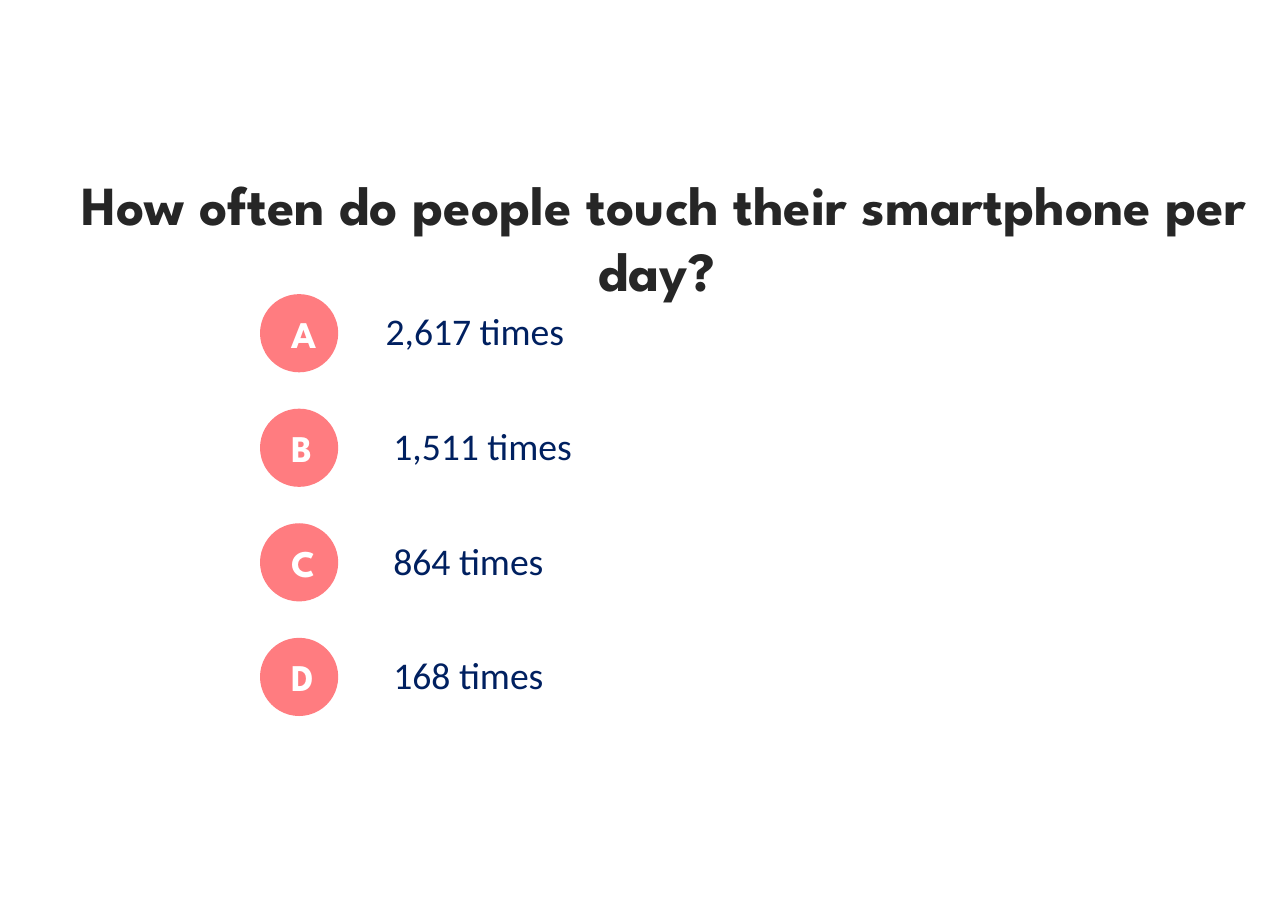
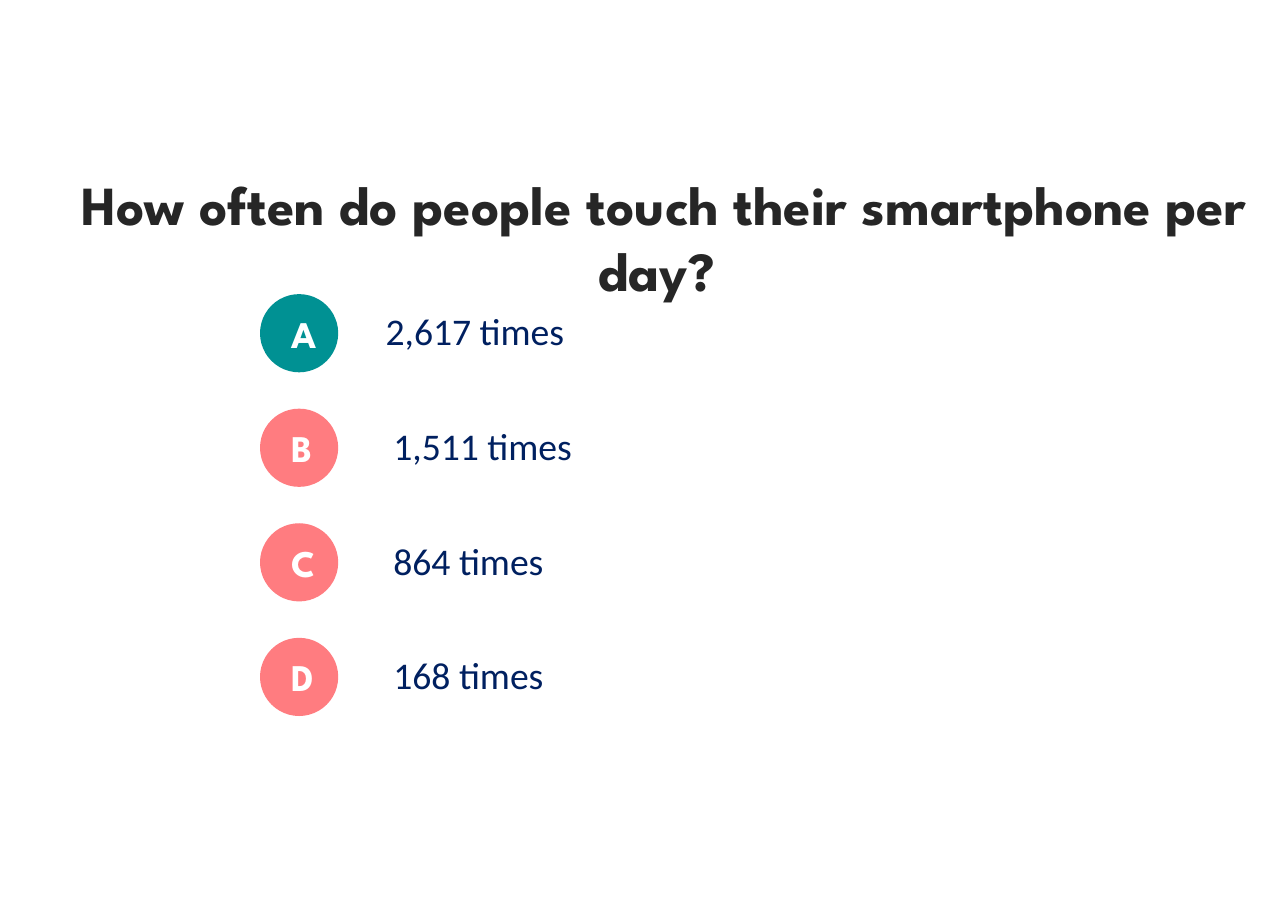
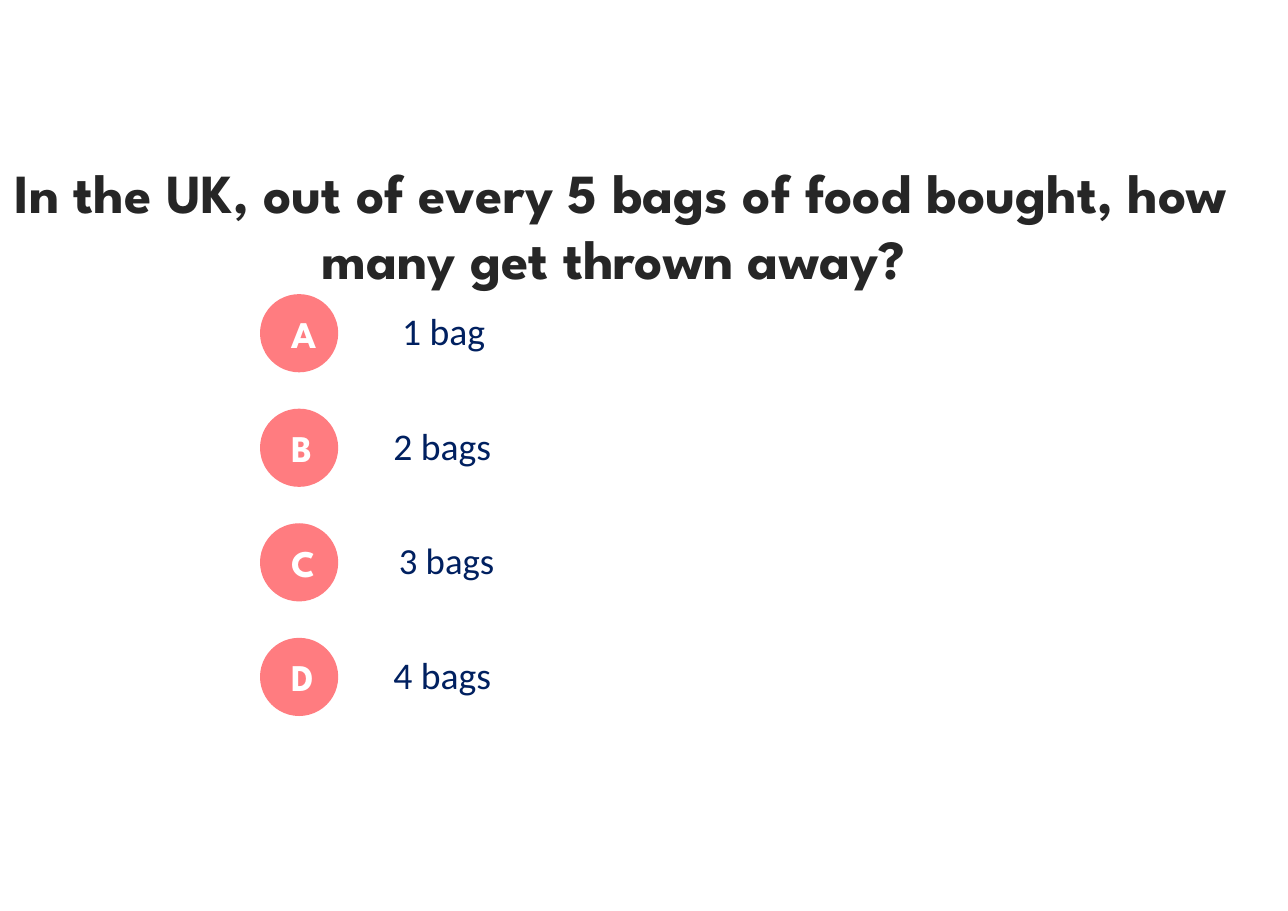
from dataclasses import dataclass

from pptx import Presentation
from pptx.dml.color import RGBColor
from pptx.enum.shapes import MSO_SHAPE
from pptx.enum.text import MSO_ANCHOR, PP_ALIGN
from pptx.util import Inches, Pt

CORAL, TEAL = "FF7C80", "009193"
NAVY, DARK, WHITE = "002060", "262626", "FFFFFF"
HEADING_FONT, BODY_FONT = "League Spartan", "Calibri"

BADGE_LEFT, BADGE_SIZE = 2.36, 0.71
FIRST_ROW, ROW_PITCH = 2.67, 1.04


@dataclass
class Answer:
    text: str
    left: float = 3.48
    size: float = 24.6


@dataclass
class Question:
    text: str
    at: tuple[float, float, float, float]
    answers: list[Answer]
    correct: str = ""


def rgb(color: str) -> RGBColor:
    return RGBColor.from_string(color)


def add_text(s, text: str, at: tuple[float, float, float, float], *, size: float,
             font: str, color: str, bold=False, align=PP_ALIGN.LEFT,
             anchor=MSO_ANCHOR.TOP, spacing=1.0, inset=(0.1, 0.05)):
    tf = s.shapes.add_textbox(*map(Inches, at)).text_frame
    tf.word_wrap = True
    tf.vertical_anchor = anchor
    tf.margin_left = tf.margin_right = Inches(inset[0])
    tf.margin_top = tf.margin_bottom = Inches(inset[1])
    p = tf.paragraphs[0]
    p.alignment = align
    p.line_spacing = spacing
    r = p.add_run()
    r.text = text
    r.font.name, r.font.size, r.font.bold = font, Pt(size), bold
    r.font.color.rgb = rgb(color)


def add_heading(s, text: str, at: tuple[float, float, float, float],
                size: float, color: str):
    add_text(s, text, at, size=size, font=HEADING_FONT, color=color,
             bold=True, align=PP_ALIGN.CENTER)


def add_answer(s, letter: str, answer: Answer, top: float, fill: str):
    """Draw one row: a round badge with its letter, and the answer beside it."""
    badge = s.shapes.add_shape(MSO_SHAPE.OVAL, Inches(BADGE_LEFT), Inches(top),
                               Inches(BADGE_SIZE), Inches(BADGE_SIZE))
    badge.shadow.inherit = False
    badge.fill.solid()
    badge.fill.fore_color.rgb = rgb(fill)
    badge.line.fill.background()
    add_heading(s, letter, (BADGE_LEFT + 0.19, top + 0.1, 0.34, 0.51), 24.6, WHITE)
    add_text(s, answer.text, (answer.left, top - 0.04, 5.22, 0.8), size=answer.size,
             font=BODY_FONT, color=NAVY, anchor=MSO_ANCHOR.MIDDLE, spacing=0.9,
             inset=(0.09, 0.04))


def add_question(prs, q: Question):
    s = prs.slides.add_slide(prs.slide_layouts[6])
    for i, (letter, answer) in enumerate(zip("ABCD", q.answers)):
        fill = TEAL if letter == q.correct else CORAL
        add_answer(s, letter, answer, FIRST_ROW + i * ROW_PITCH, fill)
    add_heading(s, q.text, q.at, 36, DARK)


def main():
    prs = Presentation()
    prs.slide_width, prs.slide_height = Inches(11.69), Inches(8.27)
    phone = ("How often do people touch their smartphone per day? ",
             (0.18, 1.5, 11.69, 1.31),
             [Answer("2,617 times", left=3.41), Answer("1,511 times"),
              Answer("864 times"), Answer("168 times")])
    food = ("In the UK, out of every 5 bags of food bought, how many get thrown away? ",
            (0, 1.39, 11.27, 1.3),
            [Answer("1 bag", left=3.56), Answer("2 bags"),
             Answer("3 bags", left=3.53, size=24), Answer("4 bags")])
    for q in (Question(*phone), Question(*phone, correct="A"), Question(*food)):
        add_question(prs, q)
    prs.save("out.pptx")


if __name__ == "__main__":
    main()
